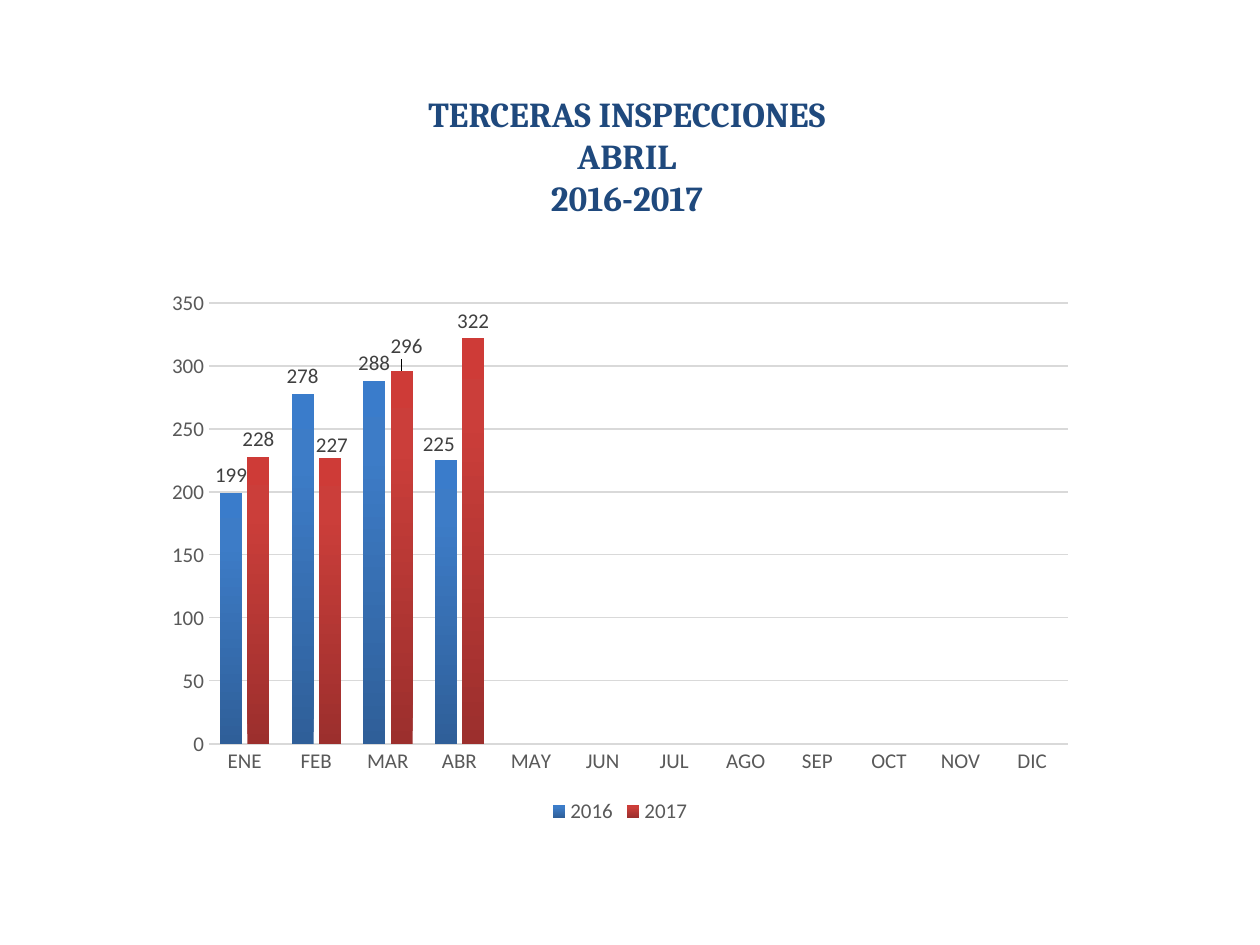
from dataclasses import dataclass

from lxml import etree
from pptx import Presentation
from pptx.chart.data import CategoryChartData
from pptx.dml.color import RGBColor
from pptx.enum.chart import XL_CHART_TYPE as ChartType
from pptx.enum.chart import XL_LABEL_POSITION as LabelPos
from pptx.enum.chart import XL_LEGEND_POSITION as LegendPos
from pptx.enum.chart import XL_TICK_MARK as Tick
from pptx.enum.text import PP_ALIGN
from pptx.oxml import parse_xml
from pptx.oxml.ns import nsdecls, qn
from pptx.util import Emu, Pt

TITLE = ["TERCERAS INSPECCIONES", "ABRIL", "2016-2017"]
MONTHS = ["ENE", "FEB", "MAR", "ABR", "MAY", "JUN",
          "JUL", "AGO", "SEP", "OCT", "NOV", "DIC"]
INSPECTIONS = {
    "2016": [199, 278, 288, 225],
    "2017": [228, 227, 296, 322],
}
# Labels moved from their usual place: month index -> (dx, dy) in px
LABEL_SHIFTS = {
    "2016": {3: (-7, 1)},
    "2017": {1: (2, 5), 2: (5, -7)},
}

SLIDE = (1260, 945)
TITLE_BOX = (312, 86, 630, 140)
CHART_BOX = (154, 280, 932, 549)
PLOT_BOX = (209, 303, 859, 441)


@dataclass(frozen=True)
class Theme:
    title: str = "1F497D"
    axis_text: str = "595959"
    label_text: str = "404040"
    grid: str = "D9D9D9"
    title_font: str = "Cambria"
    chart_font: str = "Calibri"
    title_size: int = 20
    chart_size: int = 12
    # Gradient stops, bottom to top: (percent, colour)
    bars: tuple = (
        ((0, "2F5F99"), (80, "3D7CC7"), (100, "3A7CCB")),
        ((0, "9C2F2D"), (80, "CB3E3A"), (100, "CE3B37")),
    )


THEME = Theme()


def px(n):
    return Emu(n * 914400 // 126)


def style_font(font, name, size, color, bold=False):
    font.name, font.size, font.bold = name, Pt(size), bold
    font.color.rgb = RGBColor.from_string(color)


def style_chart_text(font, color=THEME.axis_text):
    style_font(font, THEME.chart_font, THEME.chart_size, color)


def style_line(line, width):
    line.color.rgb = RGBColor.from_string(THEME.grid)
    line.width = Pt(width)


def manual_layout(**settings):
    layout = parse_xml(f"<c:layout {nsdecls('c')}><c:manualLayout/></c:layout>")
    for tag, value in settings.items():
        etree.SubElement(layout[0], qn(f"c:{tag}")).set("val", str(value))
    return layout


def fill_gradient(fmt, stops):
    """Fill with a vertical gradient that starts at the bottom."""
    fmt.fill.solid()
    gs = "".join(f'<a:gs pos="{pos * 1000}"><a:srgbClr val="{color}"/></a:gs>'
                 for pos, color in stops)
    gradient = parse_xml(
        f'<a:gradFill {nsdecls("a")} rotWithShape="1"><a:gsLst>{gs}</a:gsLst>'
        '<a:lin ang="16200000" scaled="0"/></a:gradFill>')
    solid = fmt._element.find(".//" + qn("a:solidFill"))
    solid.getparent().replace(solid, gradient)


def add_title(s):
    tf = s.shapes.add_textbox(*map(px, TITLE_BOX)).text_frame
    tf.word_wrap = True
    for i, line in enumerate(TITLE):
        p = tf.add_paragraph() if i else tf.paragraphs[0]
        p.text = line
        p.alignment = PP_ALIGN.CENTER
        style_font(p.font, THEME.title_font, THEME.title_size, THEME.title, bold=True)


def place_plot(chart):
    left, top, width, height = CHART_BOX
    x, y, w, h = PLOT_BOX
    area = chart._chartSpace.chart.plotArea
    for old in area.findall(qn("c:layout")):
        area.remove(old)
    area.insert(0, manual_layout(
        layoutTarget="inner", xMode="edge", yMode="edge",
        x=round((x - left) / width, 4), y=round((y - top) / height, 4),
        w=round(w / width, 4), h=round(h / height, 4)))


def style_series(series, stops):
    fill_gradient(series.format, stops)
    series.invert_if_negative = False
    labels = series.data_labels
    labels.show_value = True
    labels.position = LabelPos.OUTSIDE_END
    style_chart_text(labels.font, THEME.label_text)
    for i, (dx, dy) in LABEL_SHIFTS[series.name].items():
        label = series.points[i].data_label
        style_chart_text(label.font, THEME.label_text)
        label.position = LabelPos.OUTSIDE_END
        label_xml = labels._element.find(f"{qn('c:dLbl')}[{qn('c:idx')}][@val]")
        label_xml = next(d for d in labels._element.findall(qn("c:dLbl"))
                         if d.find(qn("c:idx")).get("val") == str(i))
        label_xml.insert(1, manual_layout(x=round(dx / CHART_BOX[2], 4),
                                          y=round(dy / CHART_BOX[3], 4)))


def add_inspections_chart(s):
    data = CategoryChartData()
    data.categories = MONTHS
    for year, counts in INSPECTIONS.items():
        data.add_series(year, counts + [None] * (len(MONTHS) - len(counts)))
    chart = s.shapes.add_chart(
        ChartType.COLUMN_CLUSTERED, *map(px, CHART_BOX), data).chart
    chart.has_title = False
    style_chart_text(chart.font)
    chart.has_legend = True
    chart.legend.position = LegendPos.BOTTOM
    chart.legend.include_in_layout = False
    style_chart_text(chart.legend.font)

    months, counts = chart.category_axis, chart.value_axis
    for axis in (months, counts):
        axis.major_tick_mark = axis.minor_tick_mark = Tick.NONE
        style_chart_text(axis.tick_labels.font)
    style_line(months.format.line, 1)
    counts.format.line.fill.background()
    counts.minimum_scale, counts.maximum_scale, counts.major_unit = 0, 350, 50
    style_line(counts.major_gridlines.format.line, 0.75)

    plot = chart.plots[0]
    plot.vary_by_categories = False
    plot.gap_width, plot.overlap = 100, -24
    for series, stops in zip(plot.series, THEME.bars):
        style_series(series, stops)
    place_plot(chart)


def main():
    prs = Presentation()
    prs.slide_width, prs.slide_height = map(px, SLIDE)
    s = prs.slides.add_slide(prs.slide_layouts[6])
    add_title(s)
    add_inspections_chart(s)
    prs.save("out.pptx")


if __name__ == "__main__":
    main()
